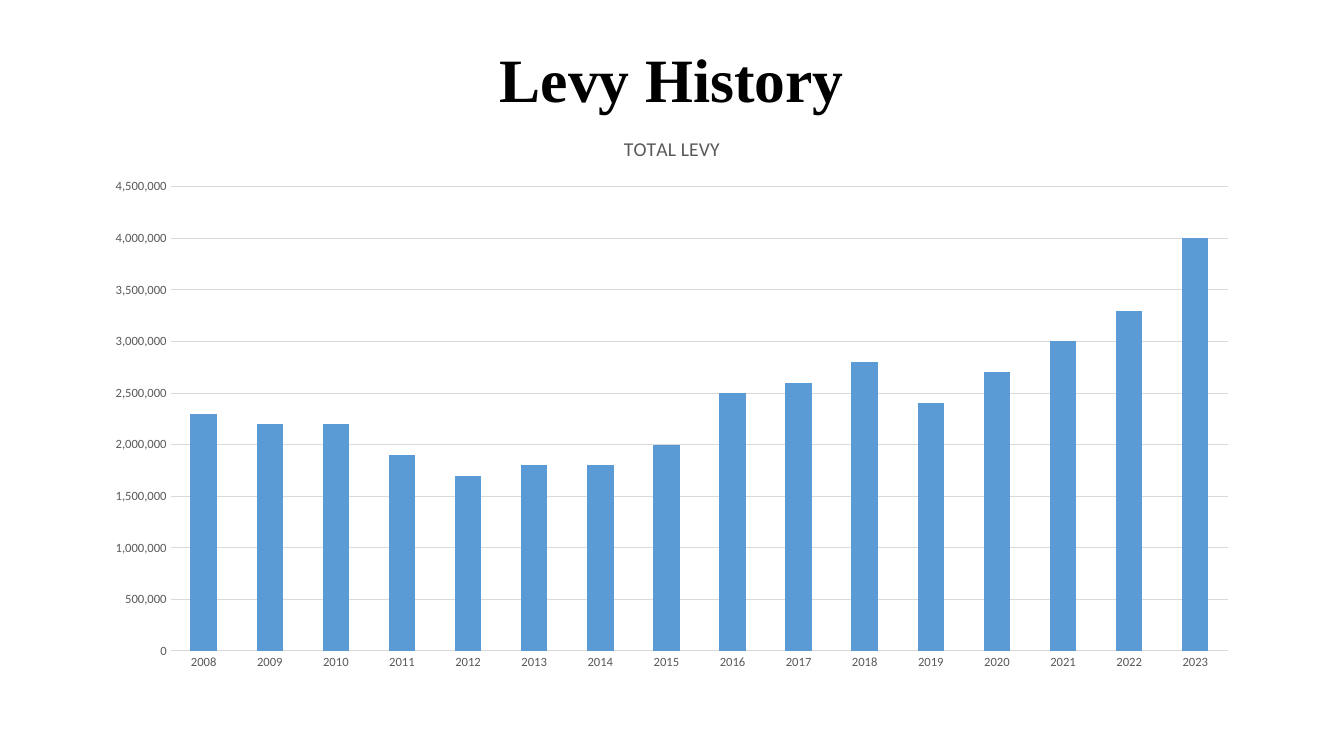
from dataclasses import dataclass

from pptx import Presentation
from pptx.chart.data import CategoryChartData
from pptx.dml.color import RGBColor
from pptx.enum.chart import XL_CHART_TYPE, XL_TICK_MARK
from pptx.enum.text import MSO_ANCHOR, PP_ALIGN
from pptx.util import Cm, Pt


@dataclass(frozen=True)
class Theme:
    """Colours, fonts and type sizes of the slide."""
    black: RGBColor = RGBColor(0, 0, 0)
    grey: RGBColor = RGBColor(0x59, 0x59, 0x59)
    grid: RGBColor = RGBColor(0xD9, 0xD9, 0xD9)
    bar: RGBColor = RGBColor(0x5B, 0x9B, 0xD5)
    heading_font: str = "Times New Roman"
    chart_font: str = "Calibri"
    heading: Pt = Pt(44)
    chart_title: Pt = Pt(14)
    chart_text: Pt = Pt(10)
    axis: Pt = Pt(9)


THEME = Theme()
LEFT, WIDTH = Cm(2.33), Cm(29.21)
YEARS = [str(year) for year in range(2008, 2024)]
LEVIES = [2300000, 2200000, 2200000, 1900000, 1700000, 1800000, 1800000, 2000000,
          2500000, 2600000, 2800000, 2400000, 2700000, 3000000, 3300000, 4000000]


def set_attrs(obj, values):
    """Set each named attribute of an object."""
    for name, value in values.items():
        setattr(obj, name, value)


def style_font(font, name, size, color, bold=False):
    """Apply typeface, size, weight and colour to a font."""
    set_attrs(font, {"name": name, "size": size, "bold": bold})
    font.color.rgb = color


def add_heading(s, text):
    """Add the centred slide heading."""
    tf = s.shapes.add_textbox(LEFT, Cm(0.94), WIDTH, Cm(2.26)).text_frame
    set_attrs(tf, {"word_wrap": True, "vertical_anchor": MSO_ANCHOR.MIDDLE})
    p = tf.paragraphs[0]
    set_attrs(p, {"alignment": PP_ALIGN.CENTER, "line_spacing": 0.9})
    r = p.add_run()
    r.text = text
    style_font(r.font, THEME.heading_font, THEME.heading, THEME.black, True)


def style_axis(axis):
    """Give an axis grey labels and hide its line and ticks."""
    set_attrs(axis, {"major_tick_mark": XL_TICK_MARK.NONE,
                     "minor_tick_mark": XL_TICK_MARK.NONE})
    axis.format.line.fill.background()
    style_font(axis.tick_labels.font, THEME.chart_font, THEME.axis, THEME.grey)


def style_value_axis(axis):
    """Set the scale, number format and gridlines of the value axis."""
    set_attrs(axis, {"minimum_scale": 0, "maximum_scale": 4500000,
                     "major_unit": 500000, "has_major_gridlines": True})
    set_attrs(axis.tick_labels, {"number_format": "#,##0",
                                 "number_format_is_linked": False})
    line = axis.major_gridlines.format.line
    line.width = Pt(0.75)
    line.color.rgb = THEME.grid


def add_column_chart(s, title, categories, values):
    """Add a titled column chart with one series."""
    data = CategoryChartData(number_format="#,##0")
    data.categories = categories
    data.add_series(title, values)
    chart = s.shapes.add_chart(XL_CHART_TYPE.COLUMN_CLUSTERED, LEFT, Cm(2.91),
                               WIDTH, Cm(14.25), data).chart
    set_attrs(chart, {"has_legend": False, "has_title": True})
    style_font(chart.font, THEME.chart_font, THEME.chart_text, THEME.black)
    chart.chart_title.include_in_layout = False
    r = chart.chart_title.text_frame.paragraphs[0].add_run()
    r.text = title
    style_font(r.font, THEME.chart_font, THEME.chart_title, THEME.grey)
    for axis in (chart.category_axis, chart.value_axis):
        style_axis(axis)
    style_value_axis(chart.value_axis)
    plot = chart.plots[0]
    set_attrs(plot, {"gap_width": 150, "vary_by_categories": False})
    fill = plot.series[0].format.fill
    fill.solid()
    fill.fore_color.rgb = THEME.bar


def main():
    """Build and save the levy history slide."""
    prs = Presentation()
    set_attrs(prs, {"slide_width": Cm(33.87), "slide_height": Cm(19.05)})
    s = prs.slides.add_slide(prs.slide_layouts[6])
    add_heading(s, "Levy History")
    add_column_chart(s, "TOTAL LEVY", YEARS, LEVIES)
    prs.save("out.pptx")


if __name__ == "__main__":
    main()
